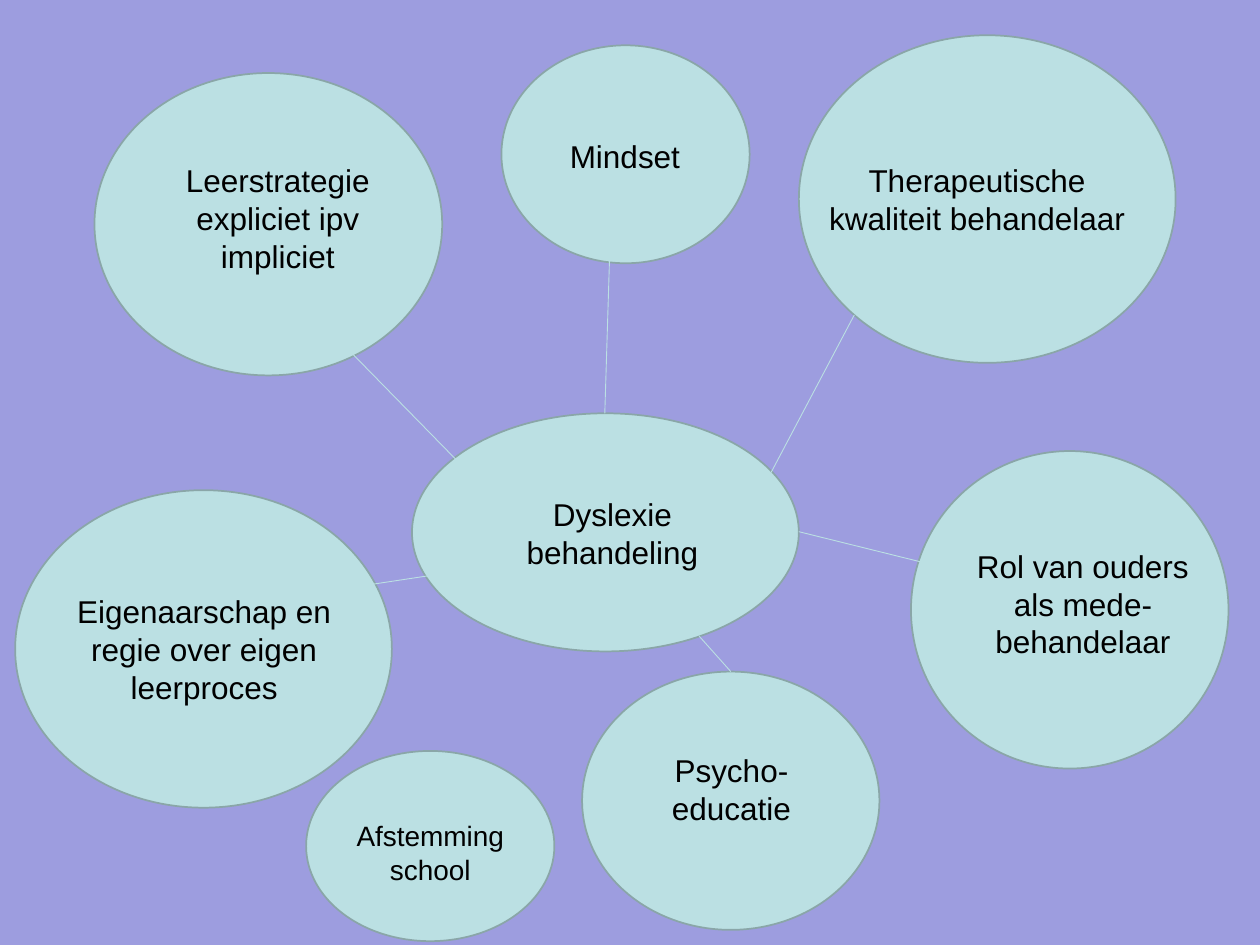
import pptx
import pptx.util
import pptx.dml.color
import pptx.enum.shapes
import pptx.enum.text
import pptx.oxml.ns
from lxml import etree

Inches, Pt = pptx.util.Inches, pptx.util.Pt
RGB = pptx.dml.color.RGBColor.from_string
COLORS = {"background": "9D9DDF", "bubble": "BBE0E3", "outline": "8AA6A8", "text": "000000"}

# Ellipse box, text box, font size, paragraphs
bubbles = [
    ((3.27, 3.28, 3.07, 1.89), (3.52, 3.88, 2.68, 0.71), 18, ["Dyslexie", "behandeling"]),
    ((0.75, 0.58, 2.76, 2.4), (1.14, 1.23, 2.13, 1.01), 18, ["Leerstrategie expliciet ipv impliciet"]),
    ((6.34, 0.28, 2.99, 2.6), (6.34, 1.23, 2.83, 0.71), 18, ["Therapeutische kwaliteit behandelaar"]),
    ((7.23, 3.58, 2.52, 2.52), (7.61, 4.29, 1.97, 1.01), 18, ["Rol van ouders als mede-behandelaar"]),
    ((0.12, 3.89, 2.99, 2.52), (0.48, 4.65, 2.28, 1.01), 18, ["Eigenaarschap en regie over eigen leerproces"]),
    ((3.98, 0.36, 1.97, 1.73), (4.21, 1.04, 1.5, 0.4), 18, ["Mindset"]),
    ((4.62, 5.33, 2.36, 2.05), (4.96, 5.91, 1.69, 0.71), 18, ["Psycho-educatie"]),
    ((2.43, 5.96, 1.97, 1.51), (2.69, 6.45, 1.45, 0.64), 16, ["Afstemming school"]),
]
# Start x, y and end x, y
links = [
    (6.78, 2.5, 6.12, 3.75),
    (4.84, 1.98, 4.8, 3.28),
    (2.76, 2.77, 3.72, 3.75),
    (3.53, 4.55, 2.87, 4.65),
    (5.55, 5.05, 5.8, 5.33),
    (6.34, 4.22, 7.31, 4.46),
]

prs = pptx.Presentation()
prs.slide_width, prs.slide_height = Inches(10), Inches(7.5)
s = prs.slides.add_slide(prs.slide_layouts[6])
s.background.fill.solid()
s.background.fill.fore_color.rgb = RGB(COLORS["background"])

for ellipse_box, text_box, size, paragraphs in bubbles:
    sp = s.shapes.add_shape(pptx.enum.shapes.MSO_SHAPE.OVAL, *map(Inches, ellipse_box))
    sp.shadow.inherit = False
    sp.fill.solid()
    sp.fill.fore_color.rgb = RGB(COLORS["bubble"])
    sp.line.color.rgb = RGB(COLORS["outline"])
    sp.line.width = Pt(1)

    tf = s.shapes.add_textbox(*map(Inches, text_box)).text_frame
    tf.word_wrap = True
    tf.auto_size = pptx.enum.text.MSO_AUTO_SIZE.SHAPE_TO_FIT_TEXT
    tf.text = "\n".join(paragraphs)
    for p in tf.paragraphs:
        p.alignment = pptx.enum.text.PP_ALIGN.CENTER
        for r in p.runs:
            for name, value in {"name": "Arial", "size": Pt(size)}.items():
                setattr(r.font, name, value)
            r.font.color.rgb = RGB(COLORS["text"])

for link in links:
    line = s.shapes.add_connector(pptx.enum.shapes.MSO_CONNECTOR.STRAIGHT, *map(Inches, link))
    line.line.color.rgb = RGB(COLORS["bubble"])
    line.line.width = Pt(0.5)
    etree.SubElement(line._element.spPr, pptx.oxml.ns.qn("a:effectLst"))

prs.save("out.pptx")
